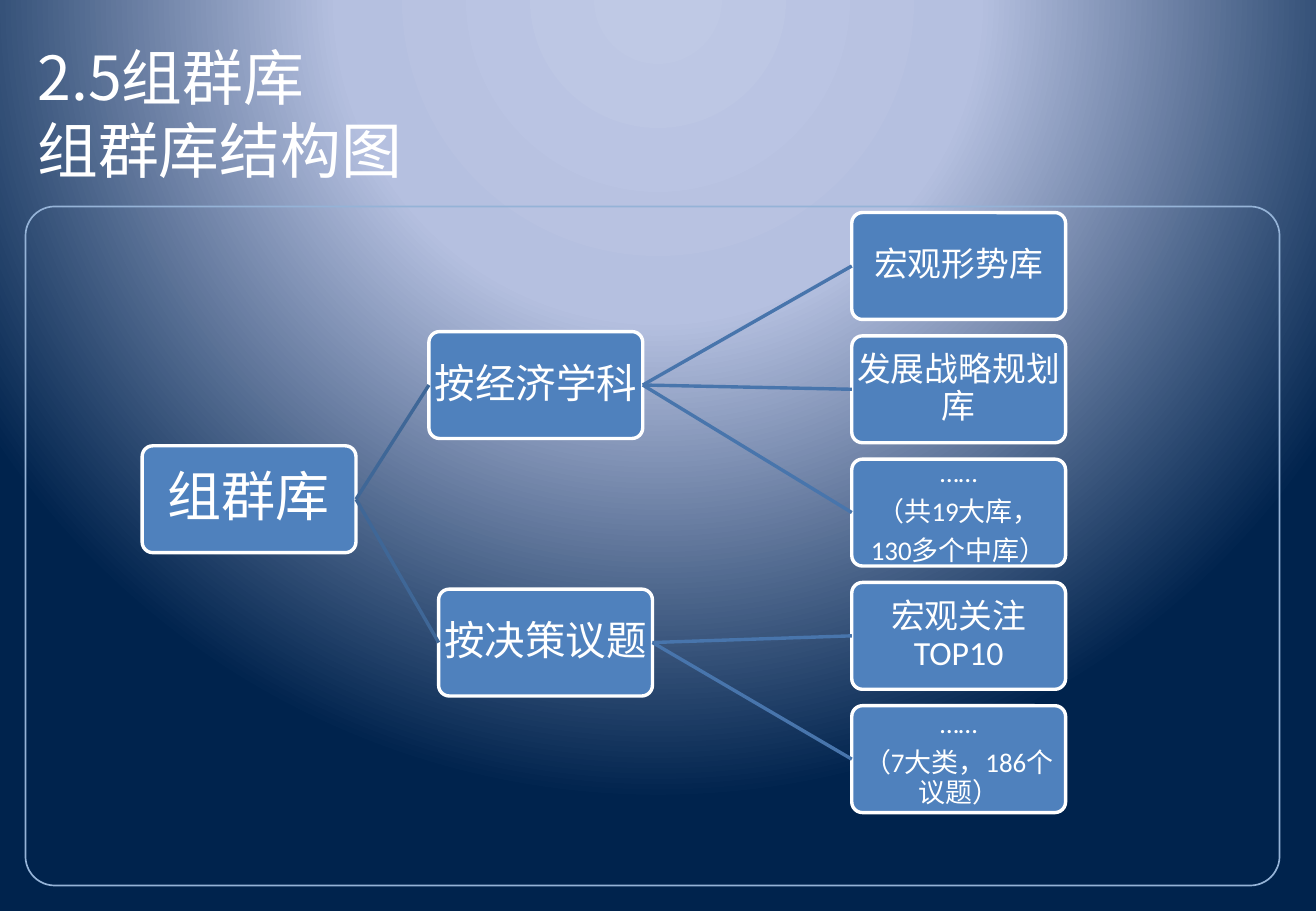
from dataclasses import dataclass

from pptx import Presentation, oxml
from pptx.dml import color
from pptx.enum import shapes, text
from pptx.oxml import ns
from pptx.util import Inches, Pt

WHITE = "FFFFFF"
NODE_FILL = "4F81BD"
NODE_WIDTH, NODE_HEIGHT = 1.76, 0.88
LEAF_LEFT, LEAF_TOP, LEAF_PITCH = 7.01, 1.75, 4.06 / 4
ROOT, SUBJECT, TOPIC = "组群库", "按经济学科", "按决策议题"


@dataclass
class Node:
    lines: list[str]
    left: float
    top: float
    size: int
    parent: str = ""
    link_color: str = "4875AC"


LEAVES = [
    (["宏观形势库"], 20, SUBJECT),
    (["发展战略规划库"], 20, SUBJECT),
    (["……", "（共19大库，", "130多个中库）"], 16, SUBJECT),
    (["宏观关注TOP10"], 20, TOPIC),
    (["……", "（7大类，186个议题）"], 16, TOPIC),
]
NODES = [
    Node([ROOT], 1.17, 3.67, 32),
    Node([SUBJECT], 3.53, 2.73, 24, ROOT, "3F6797"),
    Node([TOPIC], 3.61, 4.85, 24, ROOT, "3F6797"),
] + [
    Node(lines, LEAF_LEFT, LEAF_TOP + row * LEAF_PITCH, size, parent)
    for row, (lines, size, parent) in enumerate(LEAVES)
]


def rgb(value: str) -> color.RGBColor:
    return color.RGBColor.from_string(value)


def set_background(slide) -> None:
    stops = "".join(
        f'<a:gs pos="{position * 1000}"><a:srgbClr val="{value}"/></a:gs>'
        for position, value in [(0, "BFC9E5"), (40, "B5C0E0"), (100, "00234D")]
    )
    background = oxml.parse_xml(
        f'<p:bg {ns.nsdecls("p", "a")}><p:bgPr><a:gradFill><a:gsLst>{stops}</a:gsLst>'
        '<a:path path="circle"><a:fillToRect l="50000" t="-80000" r="50000" b="180000"/>'
        "</a:path></a:gradFill><a:effectLst/></p:bgPr></p:bg>"
    )
    slide.element.cSld.insert(0, background)


def add_round_box(slide, left: float, top: float, width: float, height: float,
                  radius: float, line_color: str, line_width: float):
    shape = slide.shapes.add_shape(
        shapes.MSO_SHAPE.ROUNDED_RECTANGLE,
        Inches(left), Inches(top), Inches(width), Inches(height))
    shape.adjustments[0] = radius
    shape.shadow.inherit = False
    shape.line.color.rgb = rgb(line_color)
    shape.line.width = Pt(line_width)
    return shape


def add_title(slide, title: str) -> None:
    shape = slide.shapes.add_textbox(Inches(0.21), Inches(0.3), Inches(10.32), Inches(1.25))
    frame = shape.text_frame
    frame.word_wrap = True
    frame.vertical_anchor = text.MSO_ANCHOR.MIDDLE
    paragraph = frame.paragraphs[0]
    paragraph.text = title
    paragraph.font.size = Pt(36)
    paragraph.font.name = "Noto Sans CJK SC"
    paragraph.font.color.rgb = rgb(WHITE)
    for run in paragraph.runs:
        run._r.get_or_add_rPr().append(oxml.parse_xml(
            f'<a:effectLst {ns.nsdecls("a")}>'
            '<a:outerShdw blurRad="38100" dist="38100" dir="2700000">'
            '<a:srgbClr val="000000"><a:alpha val="60000"/></a:srgbClr>'
            "</a:outerShdw></a:effectLst>"))


def add_node(slide, node: Node):
    shape = add_round_box(slide, node.left, node.top, NODE_WIDTH, NODE_HEIGHT, 0.1, WHITE, 2)
    shape.fill.solid()
    shape.fill.fore_color.rgb = rgb(NODE_FILL)
    frame = shape.text_frame
    frame.word_wrap = True
    frame.vertical_anchor = text.MSO_ANCHOR.MIDDLE
    frame.margin_left = frame.margin_right = Inches(0.01)
    frame.margin_top = frame.margin_bottom = Inches(0.01)
    frame.text = "\n".join(node.lines)
    for paragraph in frame.paragraphs:
        paragraph.alignment = text.PP_ALIGN.CENTER
        paragraph.line_spacing = 0.9
        paragraph.space_after = Pt(round(node.size * 0.4))
        paragraph.font.size = Pt(node.size)
        paragraph.font.name = "Calibri"
        paragraph.font.color.rgb = rgb(WHITE)
    return shape


def add_link(slide, parent, child, link_color: str) -> None:
    connector = slide.shapes.add_connector(shapes.MSO_CONNECTOR.STRAIGHT, 0, 0, 0, 0)
    connector.begin_connect(parent, 3)
    connector.end_connect(child, 1)
    connector.line.color.rgb = rgb(link_color)
    connector.line.width = Pt(2)
    connector._element.spPr.append(oxml.parse_xml(f'<a:effectLst {ns.nsdecls("a")}/>'))


def main() -> None:
    presentation = Presentation()
    presentation.slide_width = Inches(10.83)
    presentation.slide_height = Inches(7.5)
    slide = presentation.slides.add_slide(presentation.slide_layouts[6])
    set_background(slide)
    panel = add_round_box(slide, 0.21, 1.7, 10.32, 5.59, 0.043, "95B3D7", 1)
    panel.fill.background()
    add_title(slide, "2.5组群库\v组群库结构图")
    boxes = {}
    for node in NODES:
        box = add_node(slide, node)
        boxes[node.lines[0]] = box
        if node.parent:
            add_link(slide, boxes[node.parent], box, node.link_color)
    presentation.save("out.pptx")


if __name__ == "__main__":
    main()
